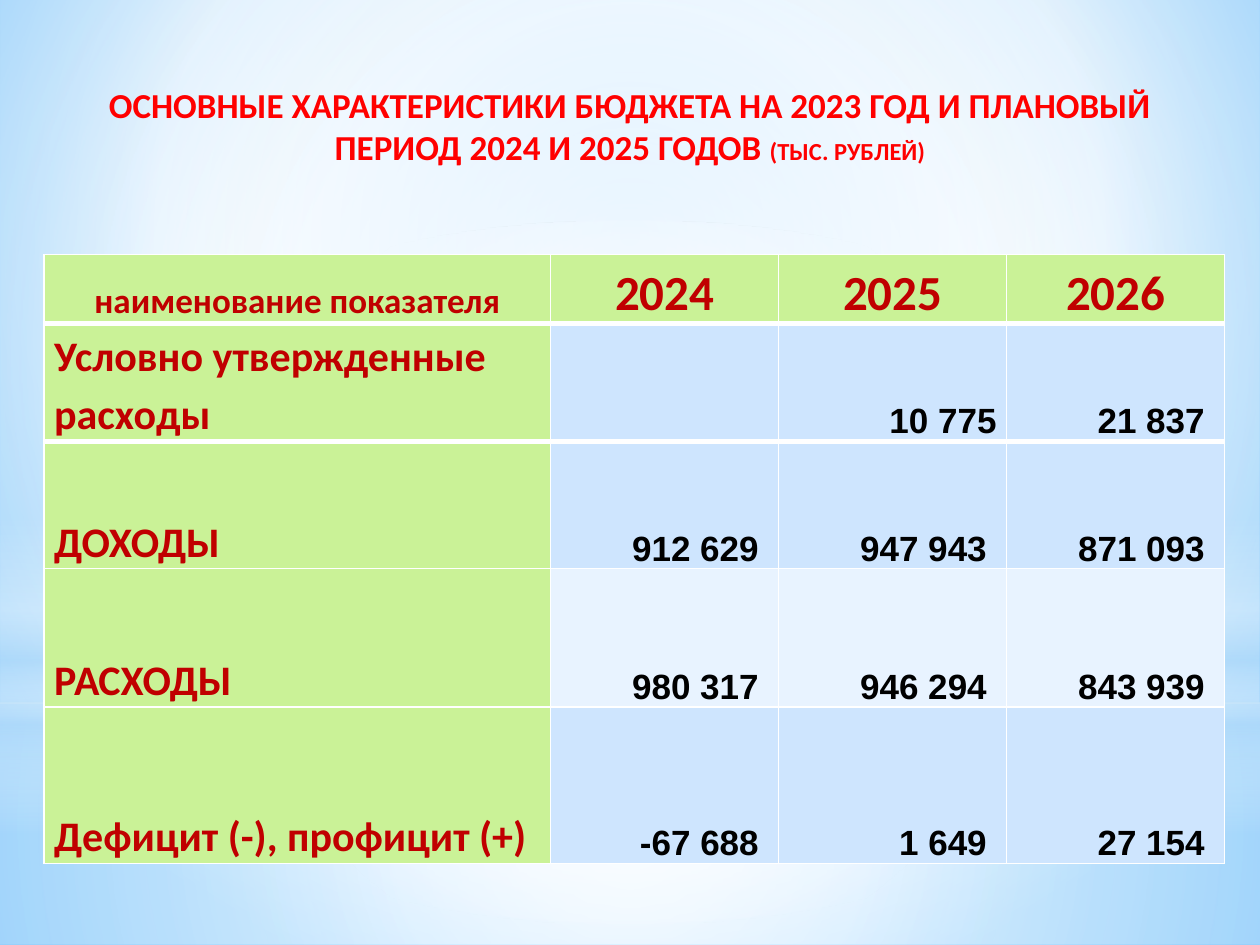
from lxml.etree import SubElement
from pptx import Presentation
from pptx.dml.color import RGBColor
from pptx.enum.shapes import MSO_SHAPE as SHAPE
from pptx.enum.text import MSO_ANCHOR as ANCHOR, MSO_AUTO_SIZE as AUTO, PP_ALIGN as ALIGN
from pptx.oxml.ns import qn
from pptx.util import Inches, Pt

WHITE, SKY, RED, DARK_RED = "FFFFFF", "B4DCFA", "FF0000", "C00000"
GREEN, BLUE, PALE_BLUE = "CAF297", "CEE5FE", "E8F3FF"
CENTRE = (50, 50, 50, 50)
HEADER = ["наименование показателя", "2024", "2025", "2026"]
ROWS = [
    ["Условно утвержденные расходы", "", "10 775", "21 837 "],
    ["ДОХОДЫ", "912 629 ", "947 943 ", "871 093 "],
    ["РАСХОДЫ", "980 317 ", "946 294 ", "843 939 "],
    ["Дефицит (-), профицит (+)", "-67 688 ", "1 649 ", "27 154 "],
]
COL_WIDTHS = [4.02, 1.81, 1.81, 1.73]
ROW_HEIGHTS = [0.53, 0.8, 1.01, 1.1, 1.24]


def rgb(value):
    """Turn a hex string into a colour."""
    return RGBColor.from_string(value)


def add_text(p, text, size=20, font="Calibri", color=DARK_RED, align=None, spacing=None):
    """Add a bold run to a paragraph and format both."""
    p.alignment, p.line_spacing = align, spacing
    r = p.add_run()
    r.text = text
    r.font.size, r.font.name, r.font.bold = Pt(size), font, True
    r.font.color.rgb = rgb(color)


def set_gradient(owner, fill, stops, focus=None, angle=0):
    """Fill with (position, colour, opacity) stops, around a focus or along an angle."""
    fill.gradient()
    grad = owner.element.find(".//" + qn("a:gradFill"))
    for child in list(grad):
        grad.remove(child)
    stop_list = SubElement(grad, qn("a:gsLst"))
    for position, color, opacity in stops:
        stop = SubElement(stop_list, qn("a:gs"), pos=str(position * 1000))
        clr = SubElement(stop, qn("a:srgbClr"), val=color)
        SubElement(clr, qn("a:alpha"), val=str(opacity * 1000))
    if focus:
        shade = SubElement(grad, qn("a:path"), path="circle")
        sides = {side: str(part * 1000) for side, part in zip("ltrb", focus)}
        SubElement(shade, qn("a:fillToRect"), **sides)
    else:
        SubElement(grad, qn("a:lin"), ang=str(angle * 60000), scaled="0")


def add_glow(s, kind, box, stops, **direction):
    """Add a borderless shape with a translucent gradient."""
    sp = s.shapes.add_shape(kind, *map(Inches, box))
    sp.shadow.inherit = False
    sp.line.fill.background()
    set_gradient(sp, sp.fill, stops, **direction)


def add_backdrop(s, width, height):
    """Paint the background and its layers of light."""
    set_gradient(s, s.background.fill,
                 [(0, "9ED5FF", 100), (60, WHITE, 100), (100, "5BB9FF", 100)],
                 focus=(20, 10, 20, 60))
    horizon = 5.58
    add_glow(s, SHAPE.RECTANGLE, (0, horizon, width, height - horizon),
             [(0, WHITE, 91), (37, WHITE, 76), (100, SKY, 79)], focus=CENTRE)
    add_glow(s, SHAPE.RECTANGLE, (0, 0, width, horizon),
             [(0, WHITE, 89), (48, WHITE, 62), (100, SKY, 79)], focus=CENTRE)
    add_glow(s, SHAPE.RECTANGLE, (0, 4.12, width, 2.5),
             [(0, WHITE, 0), (29, WHITE, 30), (45, SKY, 40), (55, WHITE, 26),
              (65, SKY, 60), (100, WHITE, 0)], angle=90)
    add_glow(s, SHAPE.OVAL, (0, 1.75, width, horizon),
             [(0, WHITE, 100), (56, WHITE, 0)], focus=CENTRE)


def add_title(s, left, top, width, height):
    """Place the title above the backdrop."""
    title = s.shapes.title
    s.shapes.element.append(title.element)
    title.left, title.top = Inches(left), Inches(top)
    title.width, title.height = Inches(width), Inches(height)
    tf = title.text_frame
    tf.word_wrap, tf.auto_size, tf.vertical_anchor = True, AUTO.NONE, ANCHOR.MIDDLE
    p = tf.paragraphs[0]
    add_text(p, "ОСНОВНЫЕ ХАРАКТЕРИСТИКИ БЮДЖЕТА НА 2023 ГОД И ПЛАНОВЫЙ "
                "ПЕРИОД 2024 И 2025 ГОДОВ ", color=RED, align=ALIGN.CENTER)
    add_text(p, "(ТЫС. РУБЛЕЙ)", size=14, color=RED, align=ALIGN.CENTER)


def style_cell(cell, fill, top, bottom):
    """Set the borders, fill, margins and anchor of a cell."""
    tc_pr = cell._tc.get_or_add_tcPr()
    for side, width in zip("LRTB", (1, 1, top, bottom)):
        ln = SubElement(tc_pr, qn("a:ln" + side), w=str(Pt(width)))
        SubElement(SubElement(ln, qn("a:solidFill")), qn("a:srgbClr"), val=WHITE)
    cell.fill.solid()
    cell.fill.fore_color.rgb = rgb(fill)
    cell.margin_left = cell.margin_right = Inches(0.08)
    cell.margin_top = cell.margin_bottom = 0
    cell.vertical_anchor = ANCHOR.BOTTOM


def cell_format(row, col):
    """Give the text format for a header, row label or figure."""
    if row == 0:
        return dict(size=28 if col else 20, align=ALIGN.CENTER)
    if col == 0:
        return dict(size=24, align=ALIGN.LEFT)
    return dict(font="Arial", color="000000", align=ALIGN.RIGHT)


def add_budget_table(s, left, top):
    """Add the table of budget figures."""
    table = s.shapes.add_table(
        len(ROW_HEIGHTS), len(COL_WIDTHS), Inches(left), Inches(top),
        Inches(sum(COL_WIDTHS)), Inches(sum(ROW_HEIGHTS))).table
    for column, width in zip(table.columns, COL_WIDTHS):
        column.width = Inches(width)
    for i, texts in enumerate([HEADER] + ROWS):
        table.rows[i].height = Inches(ROW_HEIGHTS[i])
        for j, text in enumerate(texts):
            cell = table.cell(i, j)
            figure_fill = PALE_BLUE if i == 3 else BLUE
            style_cell(cell, GREEN if i == 0 or j == 0 else figure_fill,
                       top=3 if i in (1, 2) else 1, bottom=3 if i < 2 else 1)
            if text:
                add_text(cell.text_frame.paragraphs[0], text, spacing=1.15,
                         **cell_format(i, j))


def main():
    """Build the slide and save it."""
    prs = Presentation()
    prs.slide_width, prs.slide_height = Inches(10), Inches(7.5)
    s = prs.slides.add_slide(prs.slide_layouts[5])
    add_backdrop(s, 10, 7.5)
    add_title(s, 0.5, 0.37, 9, 1.25)
    add_budget_table(s, 0.35, 2.02)
    prs.save("out.pptx")


if __name__ == "__main__":
    main()
